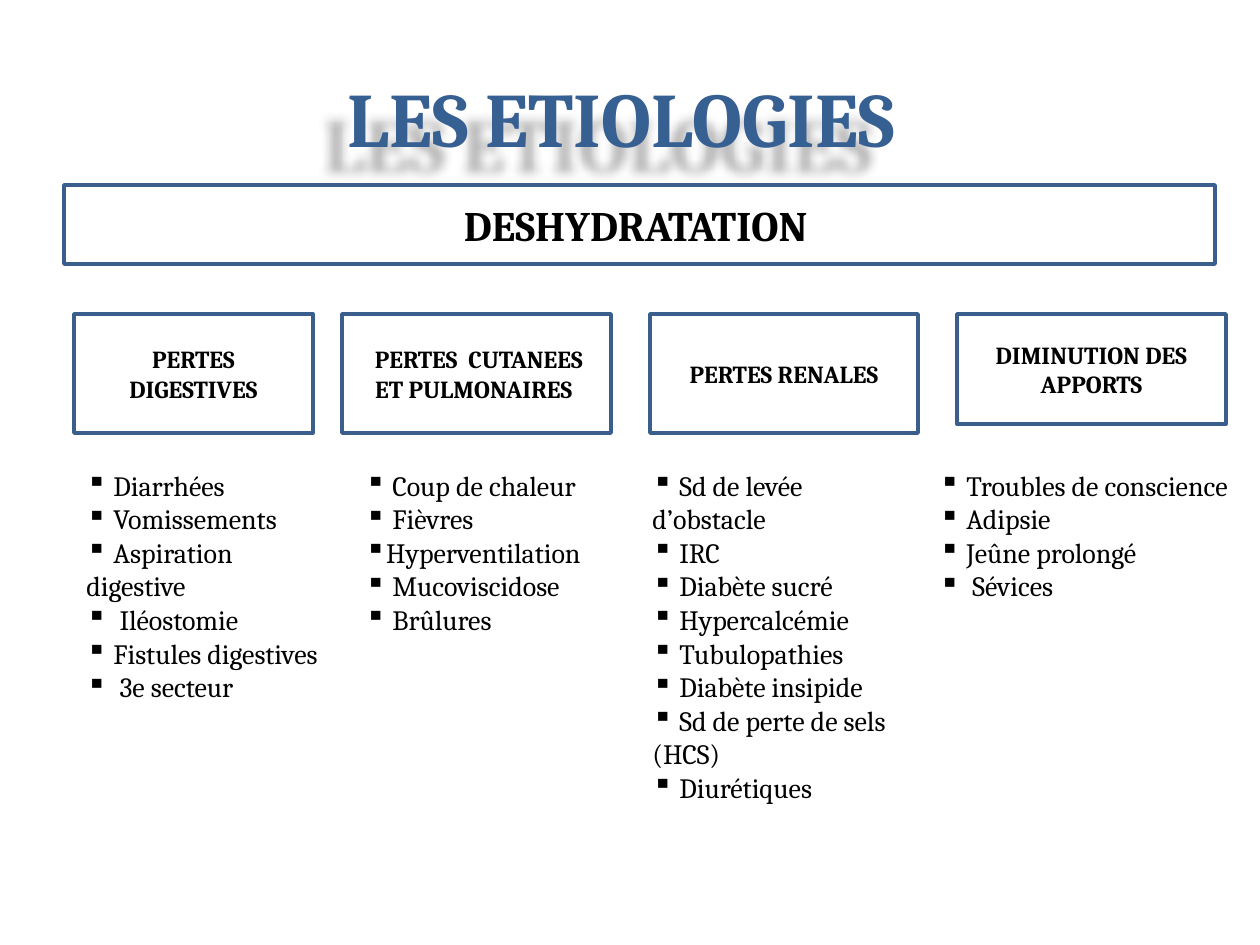
from lxml import etree
from pptx import Presentation
from pptx.dml.color import RGBColor
from pptx.enum.shapes import MSO_SHAPE
from pptx.enum.text import MSO_ANCHOR, PP_ALIGN
from pptx.oxml import parse_xml
from pptx.oxml.ns import nsdecls, qn
from pptx.util import Pt

RECT = MSO_SHAPE.RECTANGLE
MIDDLE, TOP = MSO_ANCHOR.MIDDLE, MSO_ANCHOR.TOP
CENTER, LEFT = PP_ALIGN.CENTER, PP_ALIGN.LEFT

# Content
TITLE = "LES ETIOLOGIES "
HEADING = [("DESHYDRATATION", 24), (" ", 20)]
# header runs, header (left, width, height), list (left, width, wrap), items
COLUMNS = [
    ([("PERTES DIGESTIVES", 14)], (74, 239, 119), (74, 268, True),
     [" Diarrhées", " Vomissements", " Aspiration digestive", "  Iléostomie",
      " Fistules digestives", "  3e secteur"]),
    ([(" ", 12), ("PERTES  CUTANEES ET PULMONAIRES ", 14)],
     (342, 269, 119), (353, 258, True),
     [" Coup de chaleur", " Fièvres", "Hyperventilation", " Mucoviscidose",
      " Brûlures"]),
    ([("PERTES RENALES", 14)], (650, 268, 119), (640, 268, True),
     [" Sd de levée d’obstacle", " IRC", " Diabète sucré", " Hypercalcémie",
      " Tubulopathies", " Diabète insipide", " Sd de perte de sels (HCS)",
      " Diurétiques"]),
    ([("DIMINUTION DES APPORTS", 14)], (957, 269, 110), (927, 333, False),
     [" Troubles de conscience", " Adipsie", " Jeûne prolongé", "  Sévices"]),
]
COLORS = {"title": "376092", "line": "3A5F8C", "text": "000000", "fill": "FFFFFF"}
FONT = "Cambria"
HEADER_TOP, LIST_TOP, LINE_HEIGHT, LIST_PAD = 314, 462, 34, 13


def px(n):
    return round(n * 914400 / 126)


def rgb(name):
    return RGBColor.from_string(COLORS[name])


def write(sp, paragraphs, color="text", bold=False, align=LEFT, anchor=TOP,
          bullet=None, wrap=True):
    """Fill a shape with paragraphs, each a list of (text, size) runs."""
    tf = sp.text_frame
    tf.word_wrap = wrap
    tf.vertical_anchor = anchor
    for i, runs in enumerate(paragraphs):
        p = tf.add_paragraph() if i else tf.paragraphs[0]
        p.alignment = align
        if bullet:
            etree.SubElement(p._p.get_or_add_pPr(), qn("a:buChar")).set("char", bullet)
        for text, size in runs:
            r = p.add_run()
            r.text = text
            r.font.name, r.font.size, r.font.bold = FONT, Pt(size), bold
            r.font.color.rgb = rgb(color)


def add_box(s, x, y, w, h, runs):
    sp = s.shapes.add_shape(RECT, px(x), px(y), px(w), px(h))
    sp.shadow.inherit = False
    sp.fill.solid()
    sp.fill.fore_color.rgb = rgb("fill")
    sp.line.color.rgb = rgb("line")
    sp.line.width = Pt(2)
    write(sp, [runs], bold=True, align=CENTER, anchor=MIDDLE)


prs = Presentation()
prs.slide_width, prs.slide_height = px(1260), px(945)
s = prs.slides.add_slide(prs.slide_layouts[6])

# Title with a soft shadow to the lower left
title = s.shapes.add_textbox(px(63), px(38), px(1134), px(157))
write(title, [[(TITLE, 44)]], color="title", bold=True, align=CENTER, anchor=MIDDLE)
title._element.spPr.append(parse_xml(
    f'<a:effectLst {nsdecls("a")}><a:outerShdw blurRad="{px(10)}" dist="{px(35)}" '
    'dir="8100000" algn="tl" rotWithShape="0"><a:srgbClr val="000000">'
    '<a:alpha val="30000"/></a:srgbClr></a:outerShdw></a:effectLst>'))

# Main heading
add_box(s, 64, 185, 1151, 79, HEADING)

# Causes: header box and bulleted list
for header, (x, w, h), (list_x, list_w, wrap), items in COLUMNS:
    add_box(s, x, HEADER_TOP, w, h, header)
    tb = s.shapes.add_textbox(px(list_x), px(LIST_TOP), px(list_w),
                              px(len(items) * LINE_HEIGHT + LIST_PAD))
    write(tb, [[(item, 16)] for item in items], bullet="▪", wrap=wrap)

prs.save("out.pptx")
